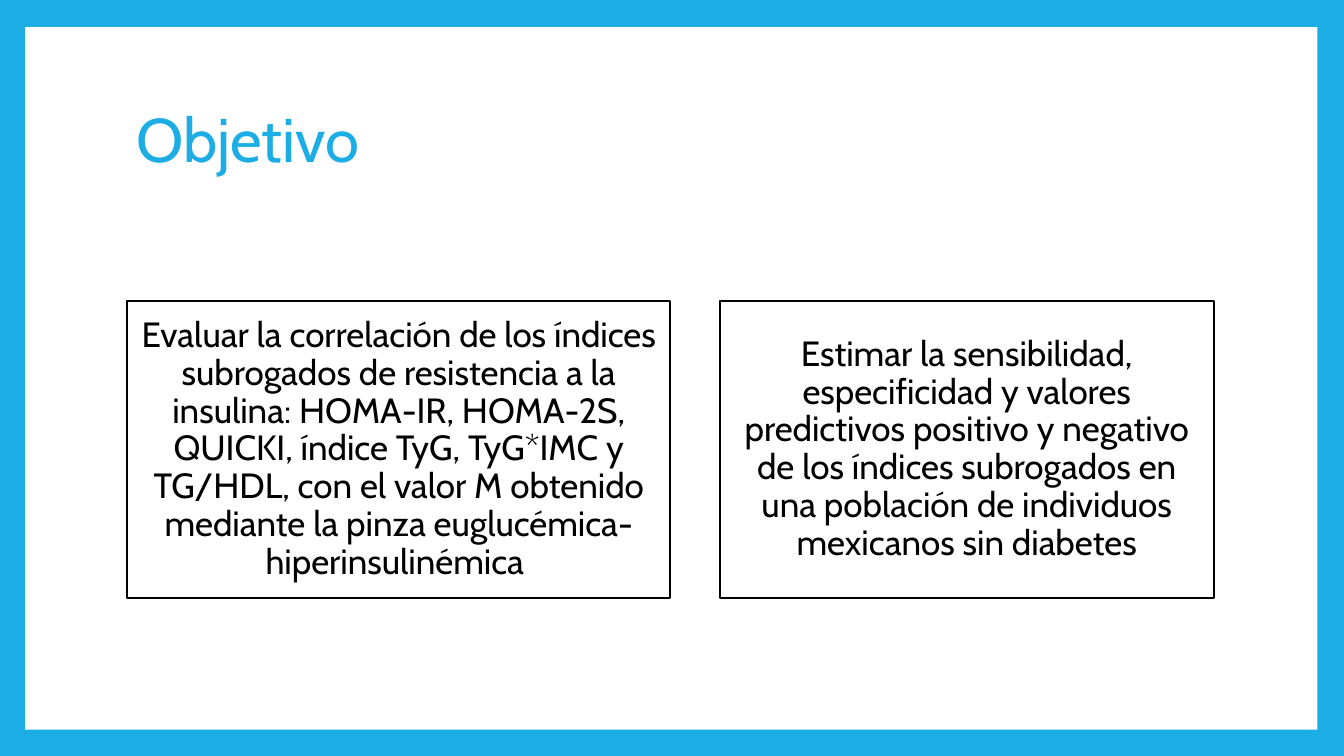
from dataclasses import dataclass

from pptx import Presentation
from pptx.dml.color import RGBColor
from pptx.enum.shapes import MSO_SHAPE
from pptx.enum.text import MSO_ANCHOR, PP_ALIGN
from pptx.util import Pt

RECTANGLE = MSO_SHAPE.RECTANGLE
MIDDLE = MSO_ANCHOR.MIDDLE
LEFT, CENTER = PP_ALIGN.LEFT, PP_ALIGN.CENTER

BLUE = RGBColor(0x1C, 0xAD, 0xE4)
WHITE = RGBColor(0xFF, 0xFF, 0xFF)
BLACK = RGBColor(0x00, 0x00, 0x00)
FONT = "Cabin"
TITLE_ONLY = 5


@dataclass(frozen=True)
class Area:
    left: float
    top: float
    width: float
    height: float


@dataclass(frozen=True)
class Objective:
    left: float
    width: float
    text: str


OBJECTIVE_TOP, OBJECTIVE_HEIGHT = 215.2, 211.7
OBJECTIVES = [
    Objective(90.7, 388.1,
              "Evaluar la correlación de los índices subrogados de resistencia "
              "a la insulina: HOMA-IR, HOMA-2S, QUICKI, índice TyG, TyG*IMC y "
              "TG/HDL, con el valor M obtenido mediante la pinza "
              "euglucémica-hiperinsulinémica "),
    Objective(514.1, 352.8,
              "Estimar la sensibilidad, especificidad y valores predictivos "
              "positivo y negativo de los índices subrogados en una población "
              "de individuos mexicanos sin diabetes"),
]


def place(shape, area: Area) -> None:
    shape.left, shape.top = Pt(area.left), Pt(area.top)
    shape.width, shape.height = Pt(area.width), Pt(area.height)


def add_rectangle(page, area: Area, outline: RGBColor | None = None):
    box = page.shapes.add_shape(RECTANGLE, 0, 0, 0, 0)
    place(box, area)
    box.shadow.inherit = False
    box.fill.solid()
    box.fill.fore_color.rgb = WHITE
    if outline is None:
        box.line.fill.background()
    else:
        box.line.color.rgb = outline
        box.line.width = Pt(1.5)
    return box


def write(shape, text: str, *, size: float, color: RGBColor,
          align: PP_ALIGN, margin: float, margin_y: float) -> None:
    frame = shape.text_frame
    frame.word_wrap = True
    frame.vertical_anchor = MIDDLE
    frame.margin_left = frame.margin_right = Pt(margin)
    frame.margin_top = frame.margin_bottom = Pt(margin_y)
    para = frame.paragraphs[0]
    para.alignment = align
    para.line_spacing = 0.9
    span = para.add_run()
    span.text = text
    span.font.name = FONT
    span.font.size = Pt(size)
    span.font.color.rgb = color


def main() -> None:
    deck = Presentation()
    deck.slide_width, deck.slide_height = Pt(960), Pt(540)
    page = deck.slides.add_slide(deck.slide_layouts[TITLE_ONLY])

    # Blue border around a white panel, which goes behind the title
    page.background.fill.solid()
    page.background.fill.fore_color.rgb = BLUE
    panel = add_rectangle(page, Area(18, 19.4, 923, 501.8))
    title = page.shapes.title
    title._element.addprevious(panel._element)

    # Title
    place(title, Area(90, 48.2, 777.6, 106.6))
    write(title, "Objetivo", size=44, color=BLUE, align=LEFT,
          margin=7.2, margin_y=3.6)

    # Objectives
    for objective in OBJECTIVES:
        box = add_rectangle(page, Area(objective.left, OBJECTIVE_TOP,
                                       objective.width, OBJECTIVE_HEIGHT), BLACK)
        write(box, objective.text, size=25, color=BLACK, align=CENTER,
              margin=7.2, margin_y=7.2)

    deck.save("out.pptx")


if __name__ == "__main__":
    main()
